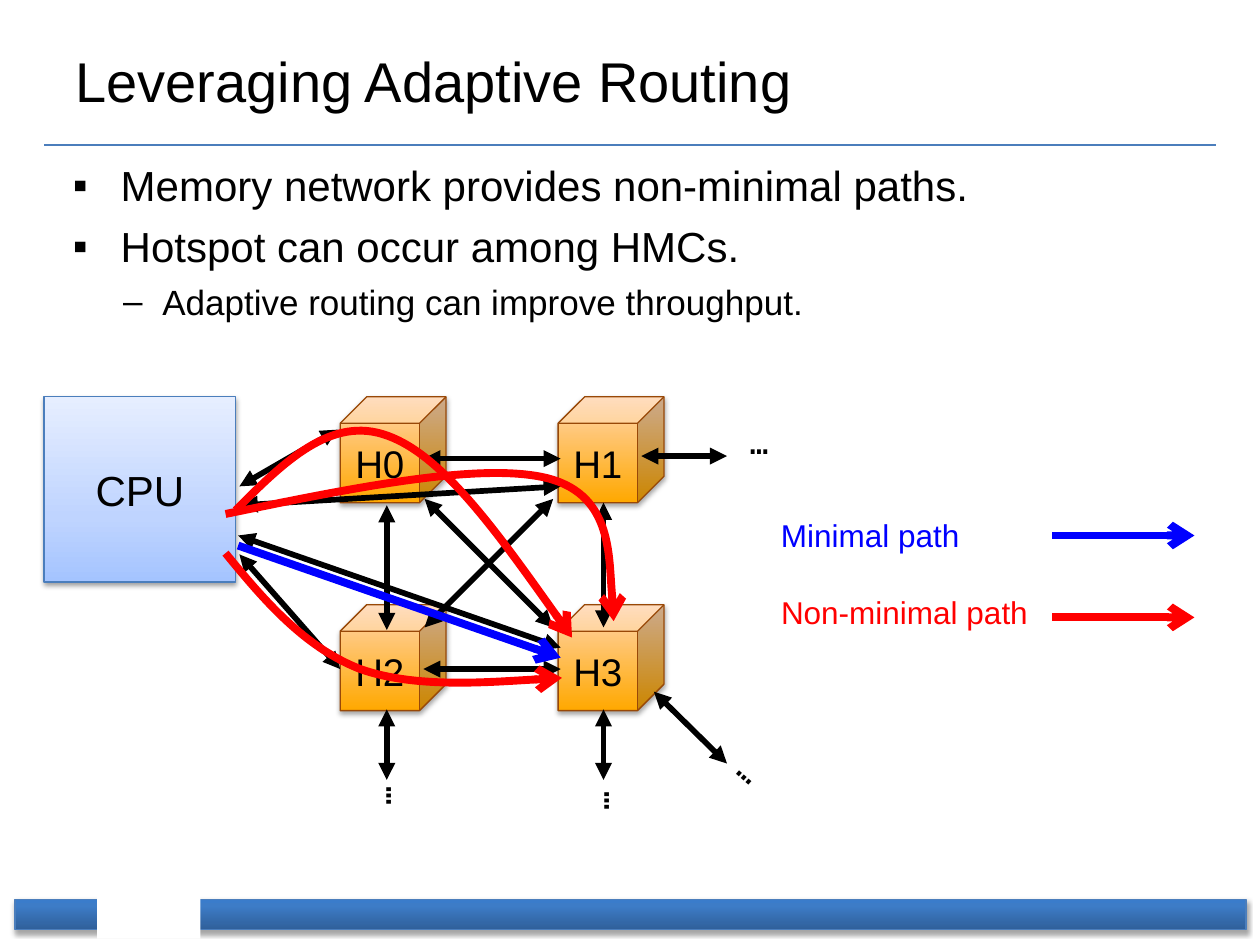
from typing import NamedTuple

from pptx import Presentation
from pptx.dml.color import RGBColor
from pptx.enum.shapes import MSO_CONNECTOR as Conn, MSO_SHAPE as Kind
from pptx.enum.text import MSO_ANCHOR as Anchor, PP_ALIGN as Align
from pptx.oxml.ns import qn
from pptx.oxml.xmlchemy import OxmlElement as Elem
from pptx.util import Inches, Pt

BLACK, BLUE, RED, EDGE = "000000", "0000FF", "FF0000", "4B7EBC"
SANS, MONO = "Arial", "DejaVu Sans Mono"


class Link(NamedTuple):
    x1: float
    y1: float
    x2: float
    y2: float
    color: str = BLACK
    width: float = 3.25
    head: str = "triangle"
    tail: str = "triangle"


class Label(NamedTuple):
    text: str
    x: float
    y: float
    w: float
    color: str = BLACK
    font: str = SANS
    turn: float = 0


class Item(NamedTuple):
    text: str
    size: int
    mark: str
    left: float
    hang: float
    gap: float
    level: int = 0


def paint(code: str) -> RGBColor:
    return RGBColor.from_string(code)


def node(parent, tag: str, **attrs):
    child = Elem(tag)
    for key, val in attrs.items():
        child.set(key, str(val))
    parent.append(child)
    return child


def write(para, text: str, size: float, color: str = BLACK, font: str = SANS) -> None:
    run = para.add_run()
    run.text = text
    run.font.size, run.font.name = Pt(size), font
    run.font.color.rgb = paint(color)


def text_box(x: float, y: float, w: float, h: float, wrap: bool = True):
    box = slide.shapes.add_textbox(Inches(x), Inches(y), Inches(w), Inches(h))
    box.text_frame.word_wrap = wrap
    return box


def block(kind, x: float, y: float, w: float, h: float, stops, edge: str,
          text: str = "", size: float = 22, alpha: int = 35, dist: float = 1.8) -> None:
    """Shape with an upward gradient, a soft shadow and centred text."""
    shape = slide.shapes.add_shape(kind, Inches(x), Inches(y), Inches(w), Inches(h))
    shape.line.color.rgb, shape.line.width = paint(edge), Pt(0.75)
    shape.fill.gradient()
    shape.fill.gradient_angle = 90
    props = shape._element.spPr
    ramp = props.find(".//" + qn("a:gsLst"))
    for old in list(ramp):
        ramp.remove(old)
    for pos, code in stops:
        node(node(ramp, "a:gs", pos=pos * 1000), "a:srgbClr", val=code)
    shape.shadow.inherit = False
    shade = node(props.find(qn("a:effectLst")), "a:outerShdw", blurRad=Pt(3.1),
                 dist=Pt(dist), dir=5400000, rotWithShape=0)
    node(node(shade, "a:srgbClr", val=BLACK), "a:alpha", val=alpha * 1000)
    if text:
        frame = shape.text_frame
        frame.vertical_anchor = Anchor.MIDDLE
        frame.paragraphs[0].alignment = Align.CENTER
        write(frame.paragraphs[0], text, size)


def stroke(shape, color: str, width: float, head: str = "", tail: str = "") -> None:
    shape.line.color.rgb, shape.line.width = paint(color), Pt(width)
    pen = shape.line._get_or_add_ln()
    for tag, kind in (("a:headEnd", head), ("a:tailEnd", tail)):
        if kind:
            node(pen, tag, type=kind)


def connect(link: Link) -> None:
    line = slide.shapes.add_connector(Conn.STRAIGHT, *map(Inches, link[:4]))
    stroke(line, link.color, link.width, link.head, link.tail)
    node(line._element.spPr, "a:effectLst")


def curve(points) -> None:
    """Red arrow along cubic curves: a start, then three points per curve."""
    start, *rest = [(Inches(x), Inches(y)) for x, y in points]
    maker = slide.shapes.build_freeform(*start)
    maker.add_line_segments(rest, close=False)
    shape = maker.convert_to_shape()
    shape.fill.background()
    shape.shadow.inherit = False
    stroke(shape, RED, 4.5, tail="arrow")
    # Turn each three straight segments into one cubic curve
    route = shape._element.spPr.find(".//" + qn("a:path"))
    legs = route.findall(qn("a:lnTo"))
    for i in range(0, len(legs), 3):
        bend = node(route, "a:cubicBezTo")
        for leg in legs[i:i + 3]:
            bend.append(leg[0])
            route.remove(leg)


def label(tag: Label) -> None:
    box = text_box(tag.x, tag.y, tag.w, 0.4, wrap=False)
    box.rotation = tag.turn
    write(box.text_frame.paragraphs[0], tag.text, 18, tag.color, tag.font)


def bullet(para, item: Item) -> None:
    para.level = item.level
    if item.gap:
        para.space_before = Pt(item.gap)
    props = para._p.get_or_add_pPr()
    props.set("marL", str(Inches(item.left)))
    props.set("indent", str(Inches(-item.hang)))
    node(props, "a:buFont", typeface=SANS)
    node(props, "a:buChar", char=item.mark)
    write(para, item.text, item.size)


deck = Presentation()
deck.slide_width, deck.slide_height = Inches(10), Inches(7.5)
slide = deck.slides.add_slide(deck.slide_layouts[6])

# Footer bar with its white gap, and title rule
block(Kind.RECTANGLE, 0.12, 7.14, 9.77, 0.24,
      [(0, "2F5F99"), (80, "3D7CC7"), (100, "3A7CCB")], EDGE)
connect(Link(0.35, 1.15, 9.65, 1.15, EDGE, 0.75, "", ""))
gap = slide.shapes.add_shape(Kind.RECTANGLE, Inches(0.77), Inches(7.06),
                             Inches(0.82), Inches(0.39))
gap.fill.solid()
gap.fill.fore_color.rgb = paint("FFFFFF")
gap.line.fill.background()
gap.shadow.inherit = False

# Title and bullets
title = text_box(0.5, 0.13, 9, 1.01).text_frame
title.vertical_anchor = Anchor.MIDDLE
write(title.paragraphs[0], "Leveraging Adaptive Routing", 32)

body = text_box(0.48, 1.22, 9, 5.62).text_frame
items = [
    Item("Memory network provides non-minimal paths.", 24, "▪", 0.38, 0.38, 0),
    Item("Hotspot can occur among HMCs.", 24, "▪", 0.38, 0.38, 6),
    Item("Adaptive routing can improve throughput.", 20, "–", 0.71, 0.31, 5, 1),
]
for n, item in enumerate(items):
    bullet(body.add_paragraph() if n else body.paragraphs[0], item)

# Memory cubes in a two by two grid, and the processor
for n in range(4):
    row, col = divmod(n, 2)
    block(Kind.CUBE, 2.7 + 1.73 * col, 3.15 + 1.65 * row, 0.84, 0.84,
          [(0, "FFA800"), (100, "FFD5AF")], "984807", f"H{n}")
block(Kind.RECTANGLE, 0.35, 3.15, 1.52, 1.47,
      [(0, "A4C4FF"), (35, "BFD4FF"), (100, "E6EEFF")], EDGE, "CPU", 24, 38, 1.6)

# Links between cubes
for y in (3.64, 5.31):
    connect(Link(3.36, y, 4.45, y))
for x, top in ((3.07, 4.01), (4.79, 3.99)):
    connect(Link(x, top, x, top + 0.99))
    connect(Link(x, 5.63, x, 6.19))
connect(Link(3.37, 3.96, 4.39, 4.98))
connect(Link(4.39, 3.96, 3.37, 4.98))

# Links from the processor, and links leading out
for ends in ((1.9, 4.4, 2.7, 5.31), (1.9, 3.86, 2.68, 3.41),
             (1.91, 4.01, 4.45, 3.86), (1.89, 4.25, 4.45, 5.14),
             (5.09, 3.62, 5.77, 3.62), (5.19, 5.49, 5.77, 6.06)):
    connect(Link(*ends))
for x, y, turn in ((5.85, 3.31, 0), (4.67, 6.21, 90), (2.94, 6.17, 90), (5.77, 5.95, 41.1)):
    label(Label("…", x, y, 0.45, BLACK, MONO, turn))

# Minimal path and non-minimal paths
connect(Link(1.89, 4.33, 4.45, 5.22, BLUE, 4.5, "", "arrow"))
curve([(1.87, 4.05), (2.25, 3.67), (2.63, 3.29), (3.08, 3.46),
       (3.52, 3.62), (4.03, 4.34), (4.54, 5.06)])
curve([(1.79, 4.39), (2.1, 4.77), (2.42, 5.14), (2.86, 5.31),
       (3.31, 5.47), (4.46, 5.38), (4.46, 5.38)])
curve([(1.79, 4.08), (2.81, 3.87), (3.84, 3.66), (4.36, 3.8),
       (4.87, 3.94), (4.87, 4.93), (4.87, 4.93)])

# Legend
for text, y, w, mid, color in (("Minimal path", 4.05, 1.63, 4.25, BLUE),
                               ("Non-minimal path", 4.66, 2.18, 4.9, RED)):
    label(Label(text, 6.1, y, w, color))
    connect(Link(8.35, mid, 9.48, mid, color, 4.5, "", "arrow"))

deck.save("out.pptx")
